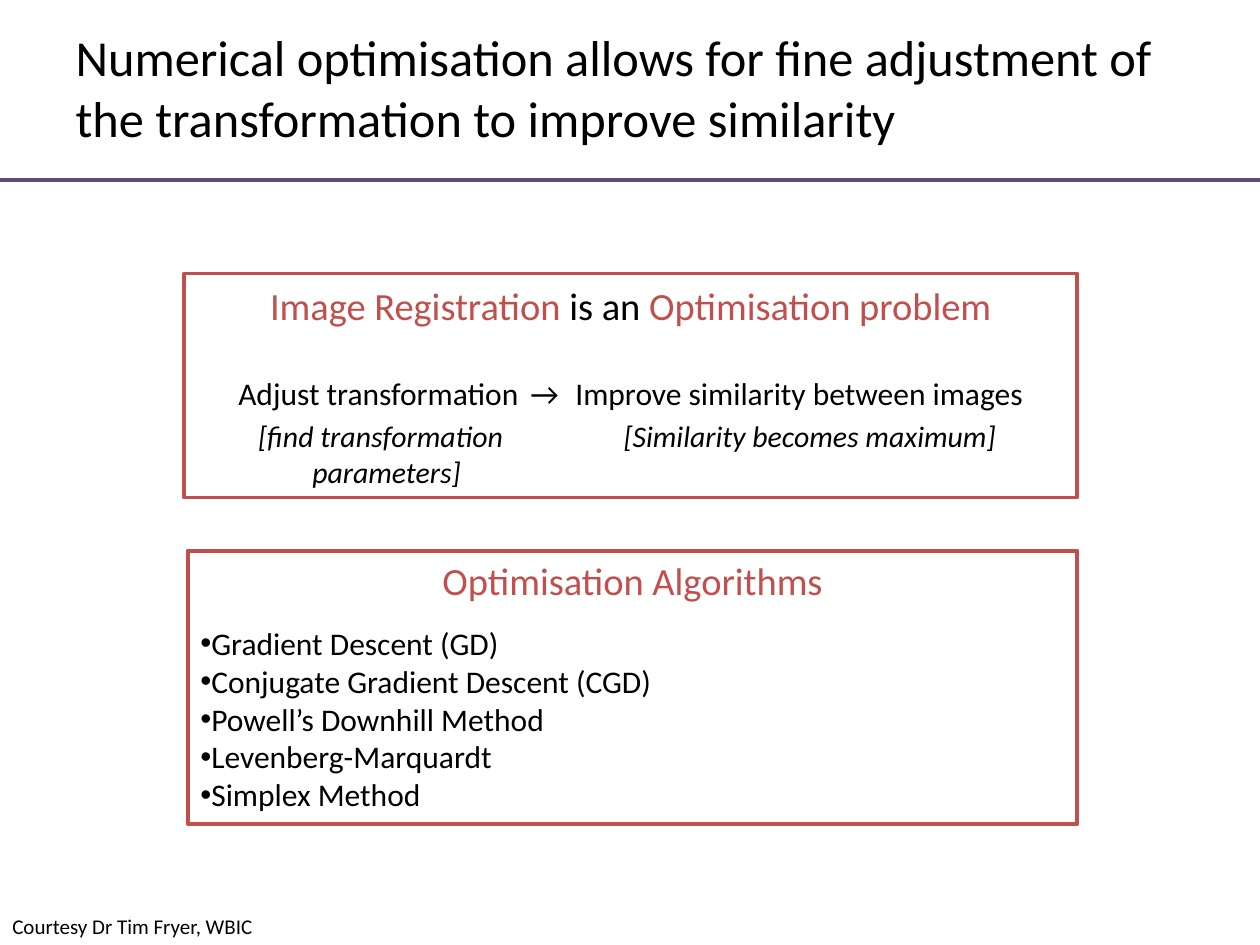
from dataclasses import dataclass

from lxml import etree
from pptx import Presentation
from pptx.dml.color import RGBColor
from pptx.enum.shapes import MSO_CONNECTOR, MSO_SHAPE
from pptx.enum.text import MSO_ANCHOR, MSO_AUTO_SIZE, PP_ALIGN
from pptx.oxml.ns import qn
from pptx.util import Inches, Pt

LEFT, CENTER = PP_ALIGN.LEFT, PP_ALIGN.CENTER
TOP, MIDDLE = MSO_ANCHOR.TOP, MSO_ANCHOR.MIDDLE
NO_FIT = MSO_AUTO_SIZE.NONE


@dataclass(frozen=True)
class Theme:
    font: str = "Calibri"
    ink: RGBColor = RGBColor(0x00, 0x00, 0x00)
    paper: RGBColor = RGBColor(0xFF, 0xFF, 0xFF)
    accent: RGBColor = RGBColor(0xC0, 0x50, 0x4D)
    rule: RGBColor = RGBColor(0x60, 0x4A, 0x7B)
    title: float = 28.8
    heading: float = 22
    body: float = 18
    note: float = 17
    credit: float = 12


theme = Theme()

# Grid of 100 columns by 75 rows
deck = Presentation()
deck.slide_width, deck.slide_height = Inches(10), Inches(7.5)
COLUMN, ROW = deck.slide_width / 100, deck.slide_height / 75
page = deck.slides.add_slide(deck.slide_layouts[1])


def place(box, left, top, width, height, anchor):
    box.left, box.width = int(left * COLUMN), int(width * COLUMN)
    box.top, box.height = int(top * ROW), int(height * ROW)
    frame = box.text_frame
    frame.auto_size, frame.word_wrap = NO_FIT, True
    frame.vertical_anchor = anchor
    return frame


def add_span(para, text, size, color=theme.ink, italic=False):
    span = para.add_run()
    span.text = text
    span.font.name, span.font.size = theme.font, Pt(size)
    span.font.color.rgb, span.font.italic = color, italic
    return span


# Title
frame = place(page.shapes.title, 5, 3, 90, 7.8, MIDDLE)
para = frame.paragraphs[0]
para.alignment = LEFT
add_span(para, "Numerical optimisation allows for fine adjustment of "
         "the transformation to improve similarity", theme.title)

# Rule under the title
rule = page.shapes.add_connector(
    MSO_CONNECTOR.STRAIGHT, deck.slide_width, int(14.3 * ROW), 0, int(14.3 * ROW))
rule.line.color.rgb, rule.line.width = theme.rule, Pt(2)
etree.SubElement(rule.element.spPr, qn("a:effectLst"))

# Problem box
problem = page.shapes.add_shape(MSO_SHAPE.RECTANGLE, 0, 0, 0, 0)
problem.shadow.inherit = False
problem.fill.solid()
problem.fill.fore_color.rgb = theme.paper
problem.line.color.rgb, problem.line.width = theme.accent, Pt(2)
frame = place(problem, 14.6, 21.7, 70.9, 17.8, MIDDLE)

para = frame.paragraphs[0]
para.alignment = CENTER
for text, color in (("Image Registration", theme.accent), (" is an ", theme.ink),
                    ("Optimisation problem", theme.accent)):
    add_span(para, text, theme.heading, color)

para = frame.add_paragraph()
para.alignment, para.space_before = CENTER, Pt(26)
add_span(para, "Adjust transformation", theme.body)
arrow = add_span(para, " → ", theme.body)
arrow.font._element.set("spc", "270")
add_span(para, "Improve similarity between images", theme.body)

# Notes under each half, set on tab stops
para = frame.add_paragraph()
para.alignment, para.space_before = LEFT, Pt(3.5)
stops = etree.SubElement(para._p.get_or_add_pPr(), qn("a:tabLst"))
for column in (4.9, 9.2, 33.9):
    etree.SubElement(stops, qn("a:tab"), pos=str(int(column * COLUMN)), algn="l")
add_span(para, "\t[find transformation", theme.note, italic=True)
add_span(para, "\t[Similarity becomes maximum]", theme.note, italic=True)
para.add_line_break()
add_span(para, "\t\tparameters]", theme.note, italic=True)

# Algorithms list
algorithms = page.placeholders[1]
algorithms.line.color.rgb, algorithms.line.width = theme.accent, Pt(2.25)
frame = place(algorithms, 14.9, 43.7, 70.6, 21.7, TOP)
para = frame.paragraphs[0]
para.alignment, para.space_before, para.space_after = CENTER, Pt(0), Pt(12)
add_span(para, "Optimisation Algorithms", theme.heading, theme.accent)
etree.SubElement(para._p.get_or_add_pPr(), qn("a:buNone"))

for method in ("Gradient Descent (GD)", "Conjugate Gradient Descent (CGD)",
               "Powell’s Downhill Method", "Levenberg-Marquardt", "Simplex Method"):
    para = frame.add_paragraph()
    para.alignment, para.space_before = LEFT, Pt(0)
    add_span(para, method, theme.body)

for para in frame.paragraphs:
    para._p.get_or_add_pPr().set("marL", "0")
    para._p.get_or_add_pPr().set("indent", "0")

# Credit
credit = page.shapes.add_textbox(0, 0, 0, 0)
frame = place(credit, 0, 72, 21.3, 3, TOP)
frame.word_wrap = False
add_span(frame.paragraphs[0], "Courtesy Dr Tim Fryer, WBIC", theme.credit)

deck.save("out.pptx")
